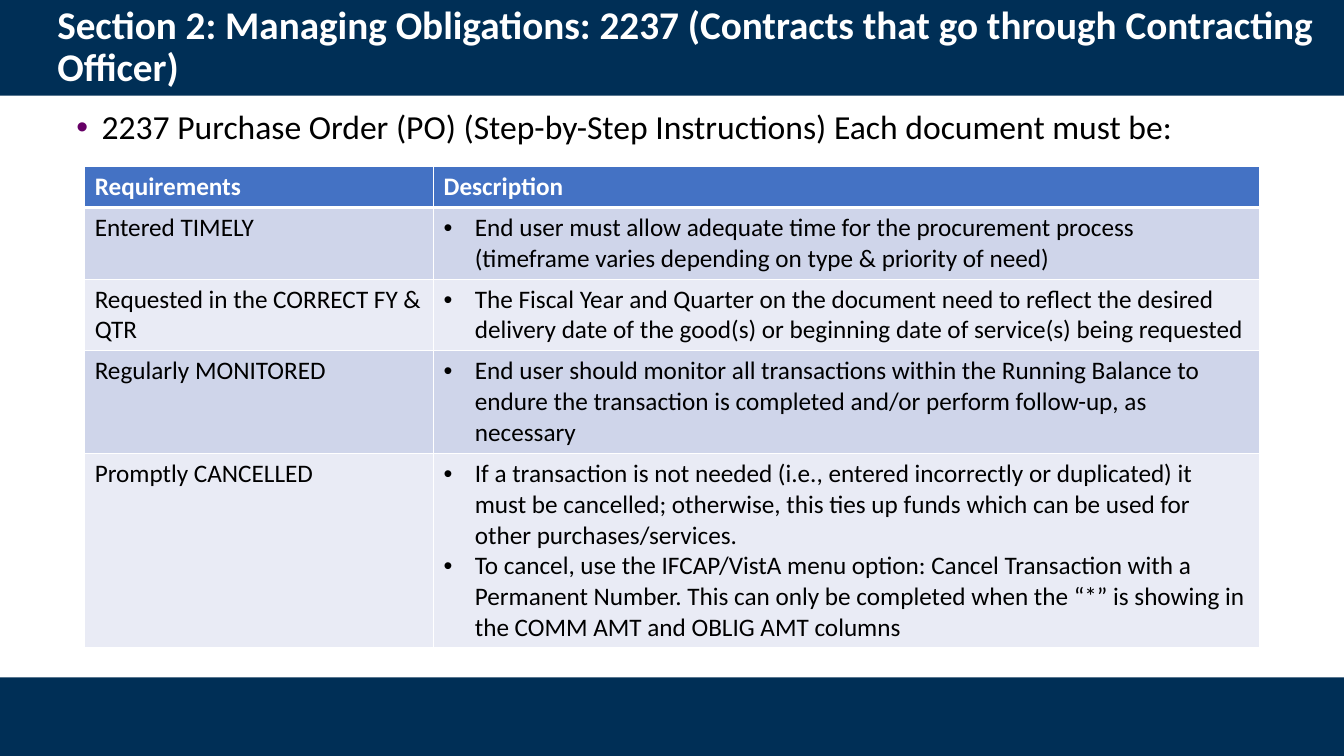
from lxml import etree
from pptx import Presentation
from pptx.dml.color import RGBColor
from pptx.enum.shapes import MSO_SHAPE
from pptx.enum.text import MSO_ANCHOR
from pptx.oxml.ns import qn
from pptx.util import Inches, Pt

NAVY, WHITE, BLACK = "002F56", "FFFFFF", "000000"
HEADER_FILL, BAND_FILLS = "4472C4", ("CFD5EA", "E9EBF5")
SLIDE_W, SLIDE_H = 13.33, 7.5

TITLE = ("Section 2: Managing Obligations: 2237 "
         "(Contracts that go through Contracting Officer)")
LEAD = "2237 Purchase Order (PO) (Step-by-Step Instructions) Each document must be:"
HEADINGS = ("Requirements", "Description")
REQUIREMENTS = [
    ("Entered TIMELY",
     ["End user must allow adequate time for the procurement process "
      "(timeframe varies depending on type & priority of need)"]),
    ("Requested in the CORRECT FY & QTR",
     ["The Fiscal Year and Quarter on the document need to reflect the desired "
      "delivery date of the good(s) or beginning date of service(s) being requested"]),
    ("Regularly MONITORED",
     ["End user should monitor all transactions within the Running Balance to "
      "endure the transaction is completed and/or perform follow-up, as necessary"]),
    ("Promptly CANCELLED",
     ["If a transaction is not needed (i.e., entered incorrectly or duplicated) it "
      "must be cancelled; otherwise, this ties up funds which can be used for "
      "other purchases/services.",
      "To cancel, use the IFCAP/VistA menu option: Cancel Transaction with a "
      "Permanent Number. This can only be completed when the “*” is showing in "
      "the COMM AMT and OBLIG AMT columns"]),
]
COL_WIDTHS = (3.46, 8.19)
ROW_HEIGHTS = (0.41, 0.71, 0.71, 1.02, 1.93)


def rgb(value):
    return RGBColor.from_string(value)


def add_bullet(p, left, hang, color):
    pPr = p._p.get_or_add_pPr()
    pPr.set("marL", str(Inches(left)))
    pPr.set("indent", str(-Inches(hang)))
    if color:
        clr = etree.SubElement(pPr, qn("a:buClr"))
        etree.SubElement(clr, qn("a:srgbClr"), val=color)
    etree.SubElement(pPr, qn("a:buFont"), typeface="Arial")
    etree.SubElement(pPr, qn("a:buChar"), char="•")


def write(tf, paragraphs, size=18, color=BLACK, bold=False, spacing=None,
          bullet=None, bullet_color=None):
    tf.word_wrap = True
    for i, text in enumerate(paragraphs):
        p = tf.add_paragraph() if i else tf.paragraphs[0]
        if spacing:
            p.line_spacing = spacing
        if bullet:
            add_bullet(p, *bullet, bullet_color)
        r = p.add_run()
        r.text = text
        r.font.name, r.font.size, r.font.bold = "Calibri", Pt(size), bold
        r.font.color.rgb = rgb(color)


def add_band(slide, top, height):
    sp = slide.shapes.add_shape(MSO_SHAPE.RECTANGLE, 0, Inches(top),
                                Inches(SLIDE_W), Inches(height))
    sp.shadow.inherit = False
    sp.fill.solid()
    sp.fill.fore_color.rgb = rgb(NAVY)
    sp.line.fill.background()


def add_text(slide, box, text, anchor=MSO_ANCHOR.TOP, **fmt):
    tf = slide.shapes.add_textbox(*map(Inches, box)).text_frame
    tf.vertical_anchor = anchor
    write(tf, [text], **fmt)


def style_cell(cell, fill, bottom=1):
    tcPr = cell._tc.get_or_add_tcPr()
    for side, width in (("L", 1), ("R", 1), ("T", 1), ("B", bottom)):
        ln = etree.SubElement(tcPr, qn(f"a:ln{side}"), w=str(Pt(width)))
        solid = etree.SubElement(ln, qn("a:solidFill"))
        etree.SubElement(solid, qn("a:srgbClr"), val=WHITE)
    cell.fill.solid()
    cell.fill.fore_color.rgb = rgb(fill)


def add_requirements_table(slide, left, top):
    table = slide.shapes.add_table(
        len(ROW_HEIGHTS), len(COL_WIDTHS), Inches(left), Inches(top),
        Inches(sum(COL_WIDTHS)), Inches(sum(ROW_HEIGHTS))).table
    for col, width in zip(table.columns, COL_WIDTHS):
        col.width = Inches(width)
    for row, height in zip(table.rows, ROW_HEIGHTS):
        row.height = Inches(height)
    for c, heading in enumerate(HEADINGS):
        cell = table.cell(0, c)
        style_cell(cell, HEADER_FILL, bottom=3)
        write(cell.text_frame, [heading], color=WHITE, bold=True)
    for i, (name, descriptions) in enumerate(REQUIREMENTS):
        name_cell, desc_cell = table.rows[i + 1].cells
        for cell in (name_cell, desc_cell):
            style_cell(cell, BAND_FILLS[i % 2], bottom=1)
        write(name_cell.text_frame, [name])
        write(desc_cell.text_frame, descriptions, bullet=(0.31, 0.31))


def build_slide(prs):
    slide = prs.slides.add_slide(prs.slide_layouts[6])
    add_band(slide, 0, 0.95)
    add_band(slide, 6.72, SLIDE_H - 6.72)
    add_text(slide, (0.47, 0, 12.7, 0.95), TITLE, anchor=MSO_ANCHOR.MIDDLE,
             size=28, color=WHITE, bold=True, spacing=0.9)
    add_text(slide, (0.16, 1.05, 11.89, 0.5), LEAD, size=24, spacing=0.9,
             bullet=(0.75, 0.25), bullet_color="660066")
    add_requirements_table(slide, 0.84, 1.65)


def main():
    prs = Presentation()
    prs.slide_width, prs.slide_height = Inches(SLIDE_W), Inches(SLIDE_H)
    build_slide(prs)
    prs.save("out.pptx")


if __name__ == "__main__":
    main()
